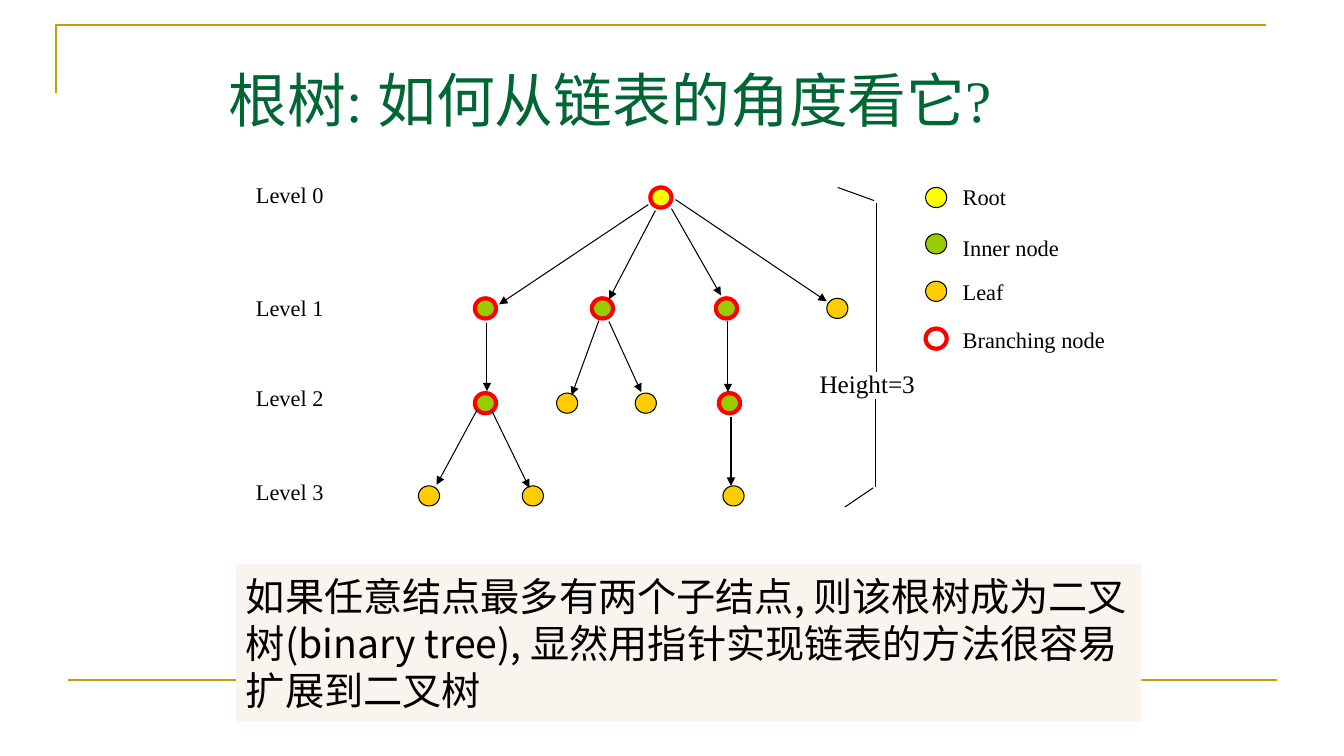
from lxml import etree
from pptx import Presentation
from pptx.dml.color import RGBColor
from pptx.enum.shapes import MSO_CONNECTOR, MSO_SHAPE
from pptx.enum.text import MSO_ANCHOR, PP_ALIGN
from pptx.oxml.ns import qn
from pptx.util import Inches, Pt

STRAIGHT = MSO_CONNECTOR.STRAIGHT
OVAL, RECT = MSO_SHAPE.OVAL, MSO_SHAPE.RECTANGLE
TOP, MIDDLE = MSO_ANCHOR.TOP, MSO_ANCHOR.MIDDLE
LEFT, JUSTIFY = PP_ALIGN.LEFT, PP_ALIGN.JUSTIFY

SERIF, SANS = "Times New Roman", "Noto Sans CJK SC"
COLORS = {
    "black": "000000", "title": "006633", "frame": "CC9900", "panel": "F9F4EE",
    "root": "FFFF00", "inner": "99CC00", "leaf": "FFCC00", "branch": "FF0000",
}


def rgb(name):
    return RGBColor.from_string(COLORS[name])


class TreeSlide:
    def __init__(self, prs):
        self.s = prs.slides.add_slide(prs.slide_layouts[6])

    def line(self, start, end, color="black", width=0.75, arrow=False):
        points = [Inches(v) for v in (*start, *end)]
        c = self.s.shapes.add_connector(STRAIGHT, *points)
        c.line.color.rgb = rgb(color)
        c.line.width = Pt(width)
        sp_pr = c._element.spPr
        if arrow:
            etree.SubElement(sp_pr.find(qn("a:ln")), qn("a:tailEnd"), type="triangle")
        etree.SubElement(sp_pr, qn("a:effectLst"))

    def corner(self, points, color, width):
        (x, y), *rest = [(Inches(x), Inches(y)) for x, y in points]
        builder = self.s.shapes.build_freeform(x, y)
        builder.add_line_segments(rest, close=False)
        sp = builder.convert_to_shape()
        sp.shadow.inherit = False
        sp.fill.background()
        sp.line.color.rgb = rgb(color)
        sp.line.width = Pt(width)

    def node(self, x, y, fill=None, branching=False):
        sp = self.s.shapes.add_shape(OVAL, Inches(x), Inches(y), Inches(0.21), Inches(0.2))
        sp.shadow.inherit = False
        if fill:
            sp.fill.solid()
            sp.fill.fore_color.rgb = rgb(fill)
        else:
            sp.fill.background()
        sp.line.color.rgb = rgb("branch" if branching else "black")
        sp.line.width = Pt(3 if branching else 0.75)

    def set_text(self, sp, text, size, font=SERIF, color="black", align=JUSTIFY,
                 anchor=TOP, spacing=None):
        tf = sp.text_frame
        tf.word_wrap = True
        tf.vertical_anchor = anchor
        p = tf.paragraphs[0]
        p.text = text
        p.alignment = align
        p.line_spacing = spacing
        p.font.size = Pt(size)
        p.font.name = font
        p.font.color.rgb = rgb(color)
        etree.SubElement(p._p.pPr.find(qn("a:defRPr")), qn("a:ea"), typeface=SANS)
        return tf

    def label(self, box, text, size=16, **style):
        sp = self.s.shapes.add_textbox(*[Inches(v) for v in box])
        return self.set_text(sp, text, size, **style)

    def panel(self, box, text, size, **style):
        sp = self.s.shapes.add_shape(RECT, *[Inches(v) for v in box])
        sp.shadow.inherit = False
        sp.fill.solid()
        sp.fill.fore_color.rgb = rgb("panel")
        sp.line.fill.background()
        self.set_text(sp, text, size, **style)


def main():
    prs = Presentation()
    prs.slide_width, prs.slide_height = Inches(13.33), Inches(7.5)
    slide = TreeSlide(prs)

    # Frame and title
    slide.corner([(0.56, 0.92), (0.56, 0.25), (12.56, 0.25)], "frame", 1.5)
    slide.line((0.67, 6.75), (12.67, 6.75), "frame", 1.5)
    title = slide.label((2.17, 0.52, 9, 1.03), "根树: 如何从链表的角度看它?", 42,
                        color="title", align=LEFT, anchor=MIDDLE, spacing=Pt(50.4))
    title.margin_bottom = Inches(0.15)

    # Tree nodes: top of each level, then (left, kind)
    levels = [
        (1.86, [(6.45, "root")]),
        (2.96, [(4.71, "inner"), (5.87, "inner"), (7.1, "inner"), (8.2, "leaf")]),
        (3.9, [(4.71, "inner"), (5.52, "leaf"), (6.3, "leaf"), (7.13, "inner")]),
        (4.82, [(7.17, "leaf"), (4.15, "leaf"), (5.18, "leaf")]),
    ]
    for top, nodes in levels:
        for left, kind in nodes:
            slide.node(left, top, kind, branching=kind != "leaf")

    # Links from parent to child
    links = [
        ((6.43, 2.03), (4.95, 3.02)), ((6.5, 2.09), (6.04, 2.97)),
        ((6.66, 2.07), (7.15, 2.93)), ((6.7, 1.98), (8.2, 2.99)),
        ((4.83, 3.2), (4.83, 3.88)), ((5.94, 3.18), (5.67, 3.92)),
        ((6.04, 3.19), (6.36, 3.89)), ((7.22, 3.18), (7.22, 3.89)),
        ((4.73, 4.07), (4.33, 4.81)), ((4.88, 4.08), (5.25, 4.84)),
        ((7.25, 4.14), (7.25, 4.82)),
    ]
    for start, end in links:
        slide.line(start, end, arrow=True)

    # Legend: top of marker, fill, top of label, width of label, text
    legend = [
        (1.86, "root", 1.77, 0.94, "Root"),
        (2.32, "inner", 2.27, 1.17, "Inner node"),
        (2.79, "leaf", 2.71, 0.94, "Leaf"),
        (3.26, None, 3.19, 1.74, "Branching node"),
    ]
    for top, fill, label_top, width, text in legend:
        slide.node(9.18, top, fill, branching=fill is None)
        slide.label((9.45, label_top, width, 0.56), text)

    # Level labels
    for level, top in enumerate((1.75, 2.87, 3.76, 4.69)):
        slide.label((2.44, top, 1.47, 0.48), f"Level {level}")

    # Height bracket
    bracket = [
        ((8.69, 2.01), (8.69, 3.69)), ((8.68, 3.96), (8.68, 4.83)),
        ((8.67, 1.99), (8.31, 1.86)), ((8.66, 4.84), (8.38, 5.03)),
    ]
    for start, end in bracket:
        slide.line(start, end)
    slide.label((8.03, 3.61, 1.34, 0.56), "Height=3", 18)

    # Conclusion
    slide.panel((2.34, 5.6, 8.98, 1.56),
                "如果任意结点最多有两个子结点, 则该根树成为二叉树(binary tree), "
                "显然用指针实现链表的方法很容易扩展到二叉树",
                28, font=SANS, align=LEFT, anchor=MIDDLE, spacing=Pt(33.6))

    prs.save("out.pptx")


if __name__ == "__main__":
    main()
